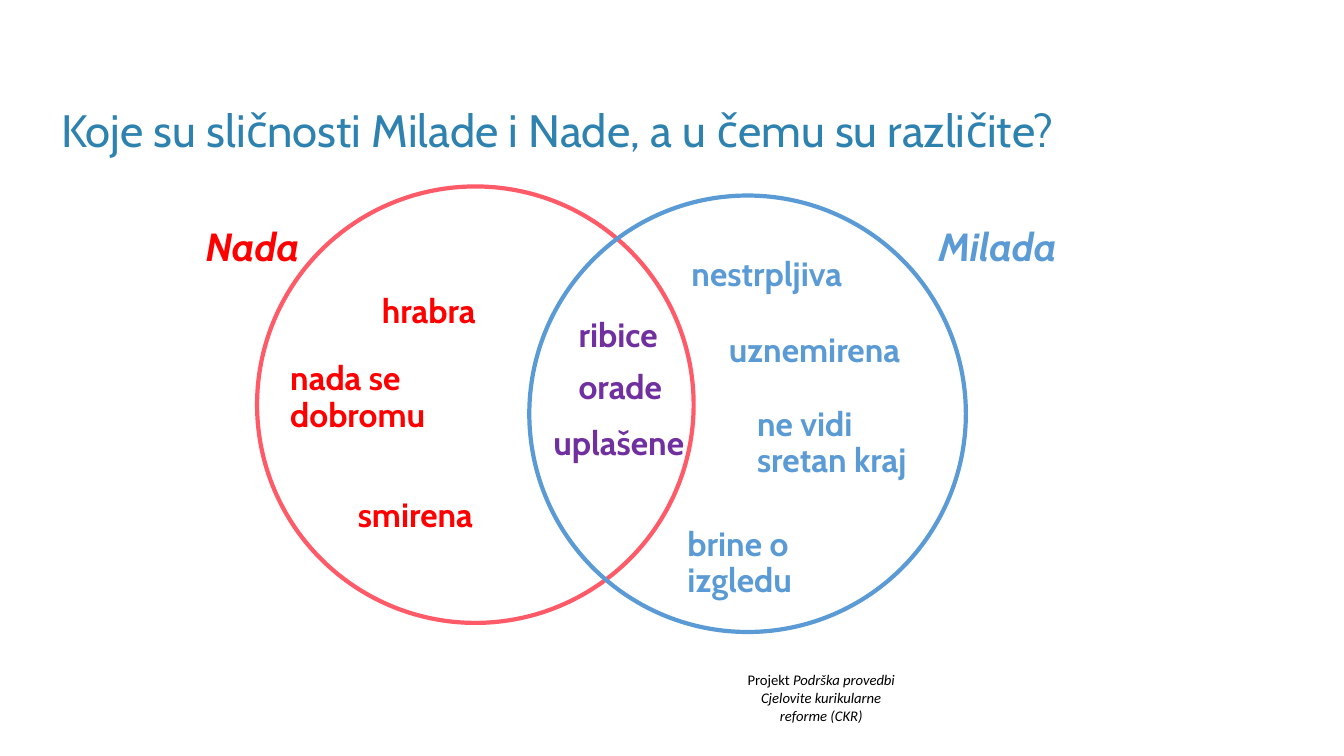
"""Builds a Venn diagram slide comparing Nada and Milada."""
import pptx
import pptx.util
import pptx.dml.color
import pptx.enum.shapes
import pptx.enum.text

Inches = pptx.util.Inches
ALIGN = pptx.enum.text.PP_ALIGN
ANCHOR = pptx.enum.text.MSO_ANCHOR

RED, BLUE, PURPLE = "FF0000", "5B9BD5", "7030A0"
DIAMETER = 4.33

TITLE = "Koje su sličnosti Milade i Nade, a u čemu su različite?"
CIRCLES = [(2.55, 1.85, "FF5A67"), (5.25, 1.94, BLUE)]
NAMES = [
    ("Nada", RED, (1.94, 2.21, 1.22, 0.61)),
    ("Milada", BLUE, (9.21, 2.21, 1.49, 0.61)),
]
TRAITS = {
    RED: [
        ("hrabra", (3.69, 2.87, 1.59, 0.41)),
        ("nada se dobromu", (2.78, 3.54, 1.85, 0.9)),
        ("smirena", (3.45, 4.9, 1.59, 0.41)),
    ],
    PURPLE: [
        ("ribice", (5.64, 3.11, 1.11, 0.41)),
        ("orade", (5.64, 3.63, 1.11, 0.41)),
        ("uplašene", (5.39, 4.18, 1.6, 0.41)),
    ],
    BLUE: [
        ("nestrpljiva", (6.76, 2.5, 1.71, 0.41)),
        ("uznemirena", (7.13, 3.26, 2.12, 0.41)),
        ("ne vidi sretan kraj", (7.41, 3.99, 1.71, 0.82)),
        ("brine o izgledu", (6.72, 5.18, 1.71, 0.74)),
    ],
}
FOOTER = [
    [("Projekt ", False), ("Podrška provedbi", True)],
    [("Cjelovite kurikularne", True)],
    [("reforme (CKR)", True)],
]


def rgb(code):
    return pptx.dml.color.RGBColor.from_string(code)


def add_text(s, text, box, size=24, color="000000", font="Cabin", bold=False,
             italic=False, align=ALIGN.LEFT, anchor=ANCHOR.TOP, spacing=0.9):
    """Add a text box from a string or from paragraphs of (text, italic) runs."""
    tf = s.shapes.add_textbox(*map(Inches, box)).text_frame
    tf.word_wrap = True
    tf.vertical_anchor = anchor
    paragraphs = [[(text, italic)]] if isinstance(text, str) else text
    for i, runs in enumerate(paragraphs):
        p = tf.add_paragraph() if i else tf.paragraphs[0]
        p.alignment = align
        p.line_spacing = spacing
        for words, slanted in runs:
            r = p.add_run()
            r.text = words
            r.font.name = font
            r.font.size = pptx.util.Pt(size)
            r.font.bold = bold
            r.font.italic = slanted
            r.font.color.rgb = rgb(color)


def add_circle(s, left, top, color):
    sp = s.shapes.add_shape(pptx.enum.shapes.MSO_SHAPE.OVAL, Inches(left),
                            Inches(top), Inches(DIAMETER), Inches(DIAMETER))
    sp.shadow.inherit = False
    sp.fill.background()
    sp.line.color.rgb = rgb(color)
    sp.line.width = pptx.util.Pt(3)


def main():
    prs = pptx.Presentation()
    prs.slide_width, prs.slide_height = Inches(13.33), Inches(7.5)
    s = prs.slides.add_slide(prs.slide_layouts[6])

    add_text(s, FOOTER, (6.99, 6.61, 2.31, 0.63), size=10.5, font="Calibri",
             align=ALIGN.CENTER, spacing=1.0)
    add_text(s, TITLE, (0.51, 0.88, 11.5, 0.88), size=32.4, color="2E82AF",
             anchor=ANCHOR.MIDDLE)
    for circle in CIRCLES:
        add_circle(s, *circle)
    for name, color, box in NAMES:
        add_text(s, name, box, size=28, color=color, bold=True, italic=True)
    for color, traits in TRAITS.items():
        for trait, box in traits:
            add_text(s, trait, box, color=color, bold=True)

    prs.save("out.pptx")


if __name__ == "__main__":
    main()
